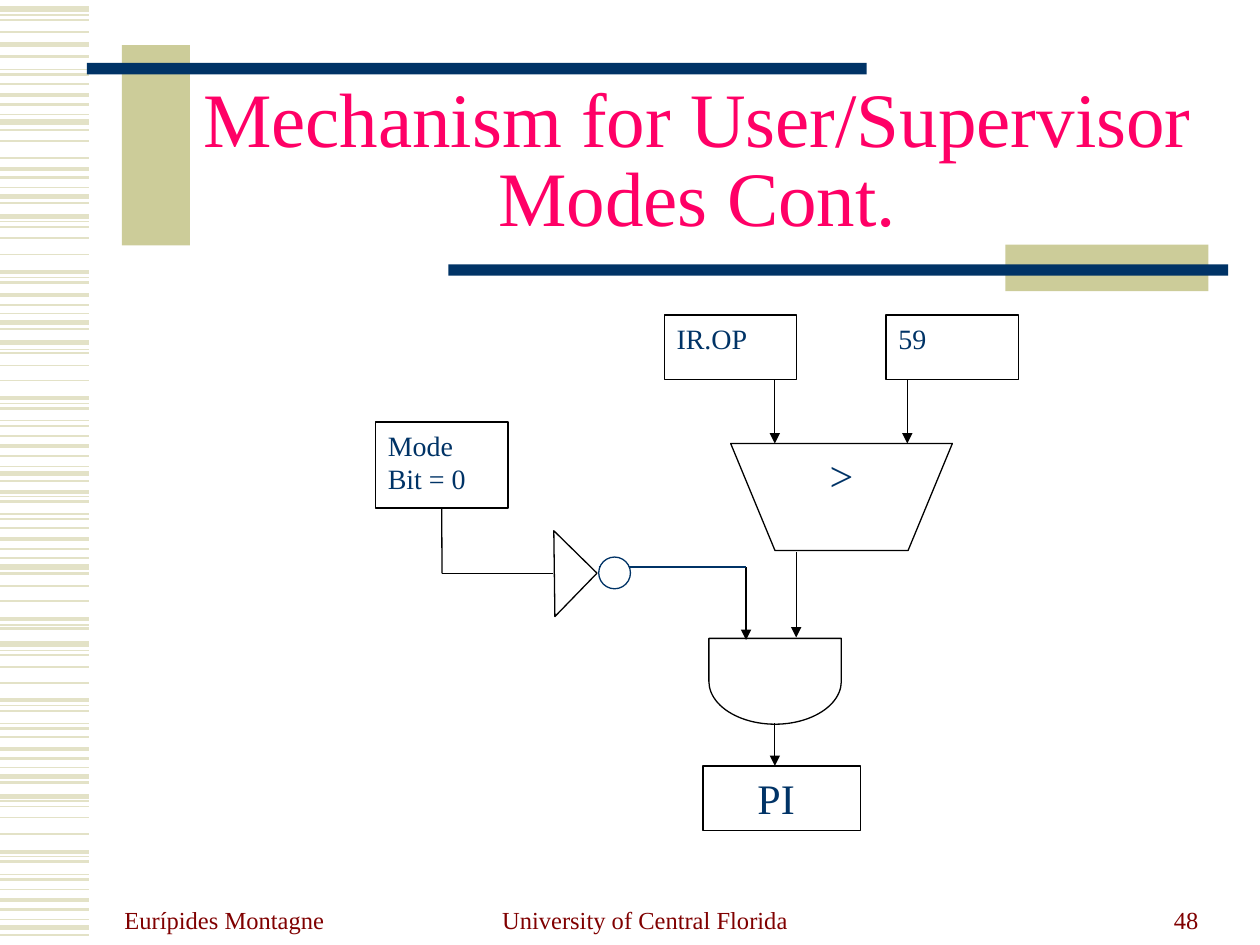
from pptx import Presentation
from pptx.dml.color import RGBColor
from pptx.enum.shapes import MSO_CONNECTOR, MSO_SHAPE as Shape
from pptx.enum.text import MSO_ANCHOR as Anchor, MSO_AUTO_SIZE, PP_ALIGN as Align
from pptx.oxml.ns import qn
from pptx.util import Cm, Pt
from lxml.etree import SubElement

FONT = "Times New Roman"
COLORS = {
    "stripe": "E3E2C7",
    "khaki": "CCCC99",
    "navy": "003366",
    "pink": "FF0066",
    "maroon": "800000",
    "black": "000000",
    "white": "FFFFFF",
}

# Heights of the margin stripes in cm, by line width in points
STRIPES = {
    0.75: [0.3, 1.4, 2.31, 3.78, 4.47, 5.59, 6.32, 7.04, 8.13, 8.48, 9.4, 10.01,
           10.36, 11.25, 12.6, 13.11, 14.22, 14.58, 15.47, 16.15, 17.27, 17.63, 18.54],
    1: [0.41, 0.64, 1.7, 2.84, 3.18, 4.57, 4.8, 5.13, 7.11, 7.37, 7.67, 8.79,
        10.64, 11.81, 12.12, 13.21, 13.44, 13.77, 14.86, 16.26, 16.48, 16.81, 17.93],
    1.5: [1.14, 1.5, 2.11, 2.62, 3.58, 4.09, 5.69, 6.15, 6.63, 8.23, 8.59, 9.19, 9.7,
          10.11, 10.46, 11.07, 11.56, 12.67, 14.33, 14.68, 15.29, 15.77, 17.37, 17.73,
          18.34, 18.85],
    2.25: [1.91, 3.4, 5.49, 5.94, 8.03, 8.99, 9.91, 10.87, 12.47, 14.12, 15.09,
           17.17, 18.14],
    3: [0.18, 0.89, 2.46, 3.96, 4.37, 6.5, 6.91, 9.55, 11.43, 12.98, 15.65, 16.05, 18.69],
}


def rgb(name):
    return RGBColor.from_string(COLORS[name])


def write(box, text, size, color, align=Align.LEFT, anchor=Anchor.TOP):
    frame = box.text_frame
    frame.word_wrap = True
    frame.auto_size = MSO_AUTO_SIZE.NONE
    frame.vertical_anchor = anchor
    frame.text = text
    for para in frame.paragraphs:
        para.alignment = align
        para.font.size = Pt(size)
        para.font.name = FONT
        para.font.color.rgb = rgb(color)


def add_block(page, kind, left, top, width, height, fill="white", line="black"):
    block = page.shapes.add_shape(kind, Cm(left), Cm(top), Cm(width), Cm(height))
    block.shadow.inherit = False
    if fill:
        block.fill.solid()
        block.fill.fore_color.rgb = rgb(fill)
    else:
        block.fill.background()
    if line:
        block.line.color.rgb = rgb(line)
        block.line.width = Pt(0.75)
    else:
        block.line.fill.background()
    return block


def add_wire(page, x1, y1, x2, y2, color="black", width=0.75, arrow=False):
    wire = page.shapes.add_connector(
        MSO_CONNECTOR.STRAIGHT, Cm(x1), Cm(y1), Cm(x2), Cm(y2))
    wire.line.color.rgb = rgb(color)
    wire.line.width = Pt(width)
    if arrow:
        SubElement(wire.line._get_or_add_ln(), qn("a:tailEnd"), type="triangle")
    SubElement(wire._element.spPr, qn("a:effectLst"))
    return wire


def add_background(page):
    for width, heights in STRIPES.items():
        for y in heights:
            add_wire(page, 0, y, 1.8, y, "stripe", width)
    for color, *place in [
        ("khaki", 2.46, 0.91, 1.37, 4.04),
        ("navy", 1.75, 1.27, 15.72, 0.23),
        ("khaki", 20.27, 4.93, 4.09, 0.94),
        ("navy", 9.04, 5.33, 15.72, 0.23),
    ]:
        add_block(page, Shape.RECTANGLE, *place, fill=color, line=None)


def add_title(page):
    title = page.shapes.title
    title.left, title.top, title.width, title.height = Cm(3.81), Cm(1.7), Cm(20.5), Cm(3.18)
    write(title, "Mechanism for User/Supervisor Modes Cont.", 44, "pink",
          Align.CENTER, Anchor.MIDDLE)
    title.text_frame.paragraphs[0].line_spacing = 0.85


def add_footer(page):
    for text, left, width, align in [
        ("Eurípides Montagne", 2.26, 5.28, Align.LEFT),
        ("University of Central Florida", 8.71, 8.59, Align.CENTER),
        ("48", 18.31, 6.1, Align.RIGHT),
    ]:
        box = page.shapes.add_textbox(Cm(left), Cm(17.7), Cm(width), Cm(1.27))
        write(box, text, 14, "maroon", align, Anchor.BOTTOM)


def add_circuit(page):
    # Operands and comparator
    for text, left in [("IR.OP", 13.39), ("59", 17.86)]:
        operand = add_block(page, Shape.RECTANGLE, left, 6.35, 2.67, 1.3)
        write(operand, text, 16, "navy")
    comparator = add_block(page, Shape.FLOWCHART_MANUAL_OPERATION, 14.73, 8.94, 4.47, 2.16)
    write(comparator, ">", 24, "navy", Align.CENTER)
    for x in (15.62, 18.29):
        add_wire(page, x, 7.65, x, 8.94, arrow=True)

    # AND gate
    gate = add_block(page, Shape.FLOWCHART_DELAY, 14.76, 12.4, 1.73, 2.67)
    gate.rotation = 90
    add_wire(page, 16.05, 11.13, 16.05, 12.85, arrow=True)

    # Mode bit and inverter
    mode = add_block(page, Shape.RECTANGLE, 7.57, 8.51, 2.67, 1.73)
    write(mode, "Mode\nBit = 0", 16, "navy")
    add_wire(page, 8.91, 10.24, 8.91, 11.56).begin_connect(mode, 2)
    inverter = add_block(page, Shape.FLOWCHART_EXTRACT, 10.74, 11.13, 1.73, 0.86)
    inverter.rotation = 89.3
    add_wire(page, 8.91, 11.56, 11.15, 11.56)

    # Interrupt output
    add_wire(page, 15.62, 14.58, 15.62, 15.44, arrow=True)
    output = add_block(page, Shape.RECTANGLE, 14.17, 15.44, 3.18, 1.3, fill=None)
    write(output, "PI", 24, "navy", anchor=Anchor.MIDDLE)
    output.text_frame.margin_left = Cm(1.1)

    # Inverted signal to the gate
    add_wire(page, 15.04, 11.43, 15.04, 12.9, arrow=True)
    add_wire(page, 12.07, 11.43, 15.04, 11.43, "navy")
    add_block(page, Shape.OVAL, 12.07, 11.23, 0.64, 0.64, line="navy")


def main():
    deck = Presentation()
    deck.slide_width, deck.slide_height = Cm(25.4), Cm(19.05)
    page = deck.slides.add_slide(deck.slide_layouts[5])
    add_background(page)
    add_footer(page)
    add_title(page)
    add_circuit(page)
    deck.save("out.pptx")


if __name__ == "__main__":
    main()
